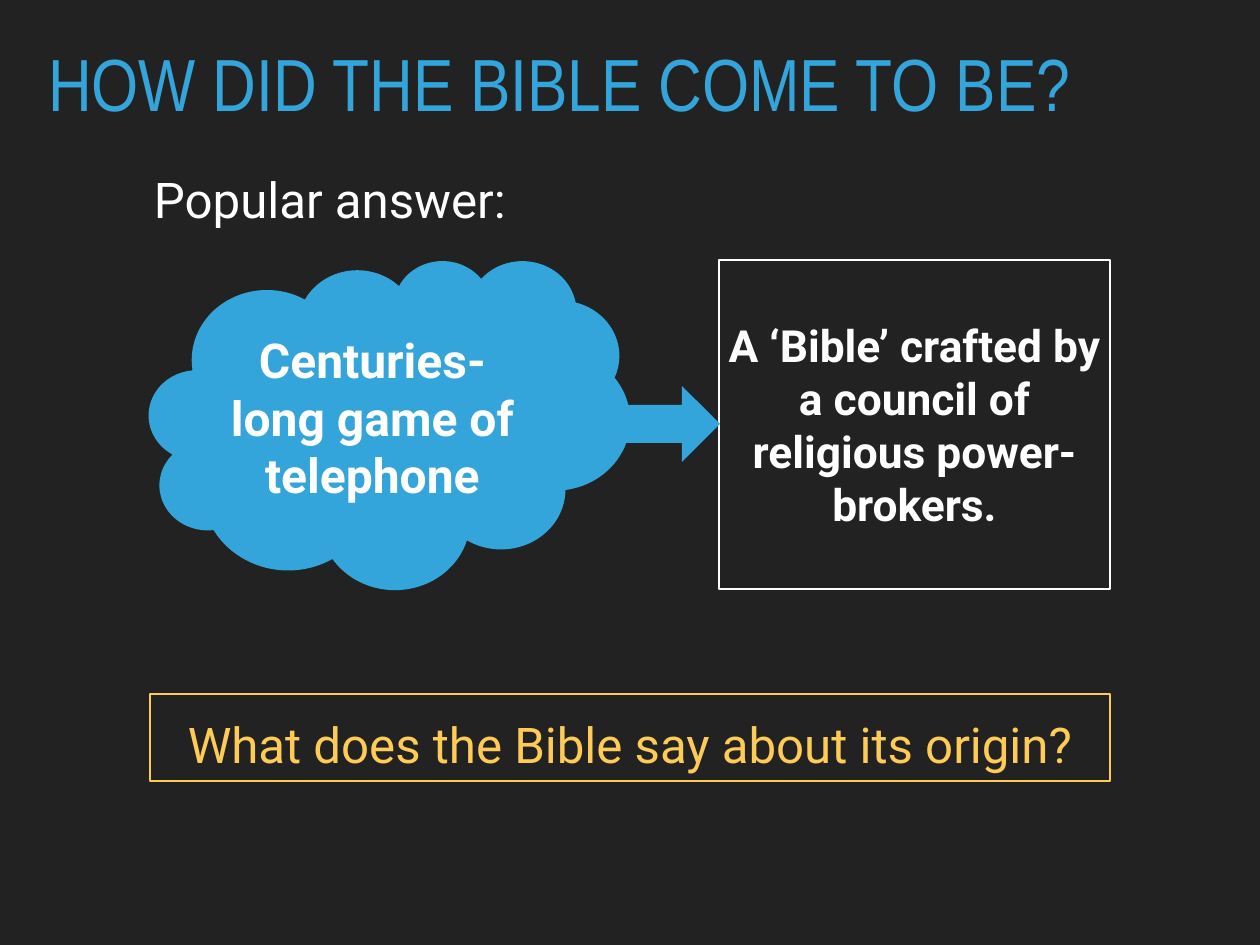
from pptx import Presentation
from pptx import util as u
from pptx.dml.color import RGBColor
from pptx.enum import shapes, text

PX = 10320  # EMU in one px
COLORS = {"dark": "222222", "blue": "34A5DA", "white": "FFFFFF", "yellow": "FDCB56"}


def color(name):
    return RGBColor.from_string(COLORS[name])


def place(shape, box):
    shape.left, shape.top, shape.width, shape.height = (length * PX for length in box)


def write(shape, words, size, ink, font="Roboto", bold=False, align="CENTER",
          spacing=None, inset=5):
    frame = shape.text_frame
    frame.text = words
    frame.word_wrap = True
    frame.auto_size = text.MSO_AUTO_SIZE.NONE
    frame.vertical_anchor = text.MSO_ANCHOR.MIDDLE
    frame.margin_left = frame.margin_right = inset * PX
    frame.margin_top = frame.margin_bottom = inset * PX
    paragraph = frame.paragraphs[0]
    paragraph.alignment = getattr(text.PP_ALIGN, align)
    if spacing:
        paragraph.line_spacing = spacing
    run_font = paragraph.runs[0].font
    run_font.name, run_font.size, run_font.bold = font, u.Pt(size), bold
    run_font.color.rgb = color(ink)


def add_shape(slide, kind, box, fill, line=None):
    shape = slide.shapes.add_shape(kind, *(length * PX for length in box))
    shape.shadow.inherit = False
    shape.fill.solid()
    shape.fill.fore_color.rgb = color(fill)
    if line:
        shape.line.color.rgb = color(line)
        shape.line.width = u.Pt(2.25)
    else:
        shape.line.fill.background()
    return shape


def add_title(slide, box):
    title = slide.shapes.title
    place(title, box)
    write(title, "HOW DID THE BIBLE COME TO BE?", 60, "blue", font="Arial Narrow",
          align="LEFT", spacing=0.8, inset=9)


def add_popular_answer(slide, box):
    left, top, width, height = box
    kinds = shapes.MSO_SHAPE
    label_height, gap = 70, 26
    row_top = top + label_height + gap
    row_height = height - label_height - gap
    council_width, cloud_width = 391, 481
    council_left = left + width - council_width

    # Label
    label = slide.shapes.add_textbox(left * PX, top * PX, 392 * PX, label_height * PX)
    write(label, "Popular answer:", 40, "white", align="LEFT")

    # Outcome
    council = add_shape(slide, kinds.RECTANGLE,
                        (council_left, row_top, council_width, row_height),
                        "dark", "white")
    write(council, "A ‘Bible’ crafted by a council of religious power-brokers.",
          36, "white", bold=True)

    # Cause
    cloud = add_shape(slide, kinds.CLOUD, (left, row_top, cloud_width, row_height), "blue")
    write(cloud, "Centuries-long game of telephone", 39, "white", bold=True)

    # Arrow from cause to outcome
    arrow_width, arrow_height = 118, 76
    add_shape(slide, kinds.RIGHT_ARROW,
              (council_left - arrow_width + 1, row_top + (row_height - arrow_height) // 2,
               arrow_width, arrow_height), "blue")


def add_question(slide, box):
    question = add_shape(slide, shapes.MSO_SHAPE.RECTANGLE, box, "dark", "yellow")
    write(question, "What does the Bible say about its origin?", 40, "yellow", spacing=1.2)


def main():
    presentation = Presentation()
    presentation.slide_width, presentation.slide_height = 1260 * PX, 945 * PX
    slide = presentation.slides.add_slide(presentation.slide_layouts[5])
    slide.background.fill.solid()
    slide.background.fill.fore_color.rgb = color("dark")

    add_title(slide, (39, 42, 1181, 97))
    add_popular_answer(slide, (149, 164, 961, 425))
    add_question(slide, (150, 694, 960, 87))
    presentation.save("out.pptx")


if __name__ == "__main__":
    main()
